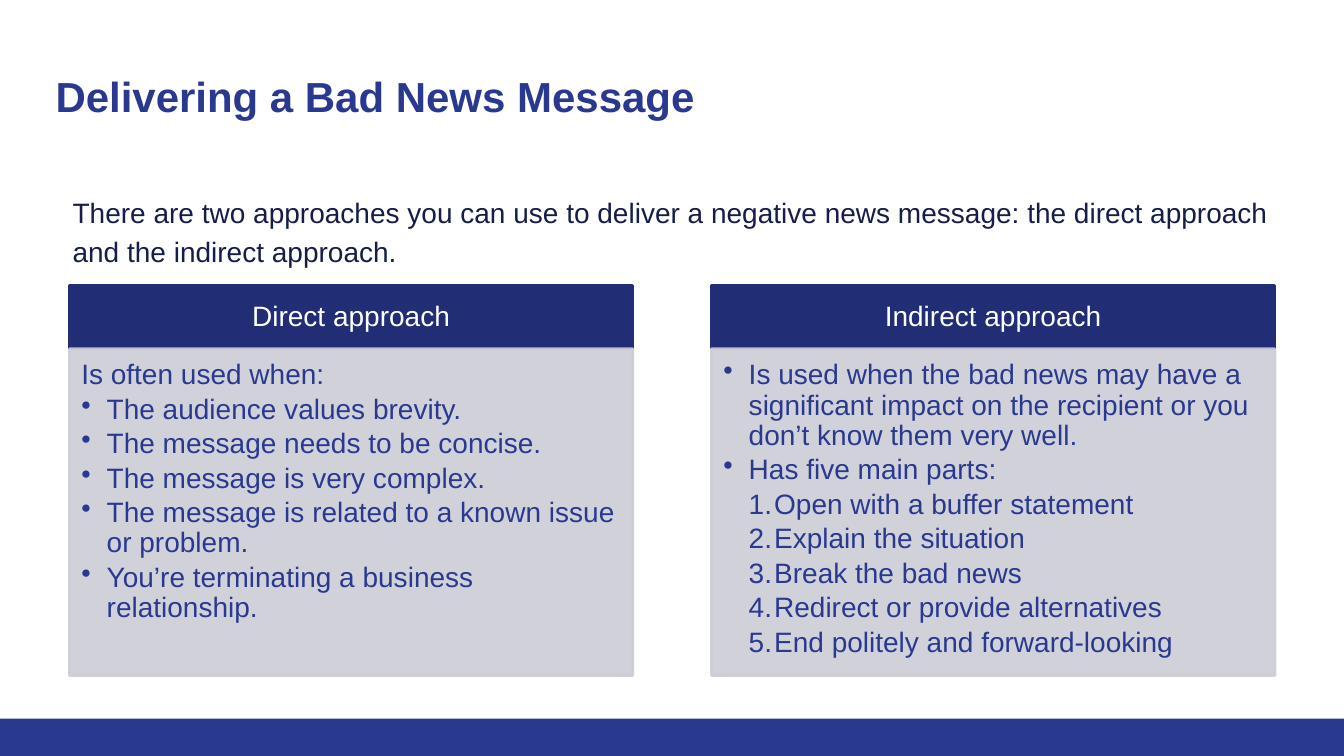
import dataclasses

import pptx
import pptx.dml.color
import pptx.enum.shapes
import pptx.enum.text
import pptx.oxml.ns
import pptx.util
from lxml import etree
from pptx.util import Cm


@dataclasses.dataclass(frozen=True)
class Theme:
    font: str = "Arial"
    title_size: int = 30
    body_size: int = 20
    blue: str = "2A3990"
    ink: str = "151D48"
    header: str = "212D74"
    panel: str = "CDCDD6"
    white: str = "FFFFFF"
    panel_opacity: int = 90


THEME = Theme()
ALIGN = pptx.enum.text.PP_ALIGN
ANCHOR = pptx.enum.text.MSO_ANCHOR

COLUMN_WIDTH = 14.2
HEADER_TOP = 7.19
HEADER_HEIGHT = 1.6
PANEL_HEIGHT = 8.23
INDENT = 0.64

PLAIN = (1, None, None)
BULLET = (1, "buChar", {"char": "•"})
NUMBER = (2, "buAutoNum", {"type": "arabicPeriod"})

COLUMNS = [
    (1.75, "Direct approach", [
        (PLAIN, "Is often used when:"),
        (BULLET, "The audience values brevity."),
        (BULLET, "The message needs to be concise."),
        (BULLET, "The message is very complex."),
        (BULLET, "The message is related to a known issue or problem."),
        (BULLET, "You’re terminating a business relationship."),
    ]),
    (17.93, "Indirect approach", [
        (BULLET, "Is used when the bad news may have a significant impact on "
                 "the recipient or you don’t know them very well."),
        (BULLET, "Has five main parts:"),
        (NUMBER, "Open with a buffer statement"),
        (NUMBER, "Explain the situation"),
        (NUMBER, "Break the bad news"),
        (NUMBER, "Redirect or provide alternatives"),
        (NUMBER, "End politely and forward-looking"),
    ]),
]


def rgb(color):
    return pptx.dml.color.RGBColor.from_string(color)


def style_font(paragraph, color, size=THEME.body_size, bold=False):
    paragraph.font.name = THEME.font
    paragraph.font.size = pptx.util.Pt(size)
    paragraph.font.bold = bold
    paragraph.font.color.rgb = rgb(color)


def prepare_frame(shape, insets, anchor=ANCHOR.TOP):
    frame = shape.text_frame
    frame.word_wrap = True
    frame.auto_size = pptx.enum.text.MSO_AUTO_SIZE.NONE
    frame.vertical_anchor = anchor
    left, top, right, bottom = insets
    frame.margin_left, frame.margin_top = Cm(left), Cm(top)
    frame.margin_right, frame.margin_bottom = Cm(right), Cm(bottom)
    return frame


def set_opacity(shape, percent):
    for color in shape.element.spPr.iter(pptx.oxml.ns.qn("a:srgbClr")):
        alpha = etree.SubElement(color, pptx.oxml.ns.qn("a:alpha"))
        alpha.set("val", str(percent * 1000))


def add_rectangle(slide, left, top, width, height, color, outlined=True):
    shape = slide.shapes.add_shape(
        pptx.enum.shapes.MSO_SHAPE.RECTANGLE,
        Cm(left), Cm(top), Cm(width), Cm(height))
    shape.shadow.inherit = False
    shape.fill.solid()
    shape.fill.fore_color.rgb = rgb(color)
    if outlined:
        shape.line.color.rgb = rgb(color)
        shape.line.width = pptx.util.Pt(2)
    else:
        shape.line.fill.background()
    return shape


def set_title(slide, text):
    title = slide.shapes.title
    title.left, title.top = Cm(1.15), Cm(1.52)
    title.width, title.height = Cm(31.55), Cm(2.26)
    frame = prepare_frame(title, (0.25,) * 4)
    frame.text = text
    paragraph = frame.paragraphs[0]
    paragraph.alignment = ALIGN.LEFT
    style_font(paragraph, THEME.blue, THEME.title_size, bold=True)


def add_intro(slide, text):
    box = slide.shapes.add_textbox(Cm(1.15), Cm(4.55), Cm(31.55), Cm(2.4))
    frame = prepare_frame(box, (0.68, 0.25, 0.25, 0.25))
    frame.text = text
    paragraph = frame.paragraphs[0]
    paragraph.line_spacing = 1.15
    style_font(paragraph, THEME.ink)


def add_header(slide, left, text):
    header = add_rectangle(
        slide, left, HEADER_TOP, COLUMN_WIDTH, HEADER_HEIGHT, THEME.header)
    frame = prepare_frame(header, (0.4, 0.23, 0.4, 0.23), ANCHOR.MIDDLE)
    frame.text = text
    paragraph = frame.paragraphs[0]
    paragraph.alignment = ALIGN.CENTER
    paragraph.line_spacing = 0.9
    style_font(paragraph, THEME.white)


def format_item(paragraph, marker):
    level, tag, attributes = marker
    paragraph.level = level
    paragraph.alignment = ALIGN.LEFT
    paragraph.line_spacing = 0.9
    paragraph.space_after = pptx.util.Pt(3)
    properties = paragraph._p.get_or_add_pPr()
    properties.set("marL", str(Cm(INDENT * level)))
    properties.set("indent", str(-Cm(INDENT)))
    if tag:
        etree.SubElement(properties, pptx.oxml.ns.qn("a:" + tag), attributes)
    style_font(paragraph, THEME.blue)


def add_panel(slide, left, items):
    panel = add_rectangle(
        slide, left, HEADER_TOP + HEADER_HEIGHT, COLUMN_WIDTH, PANEL_HEIGHT,
        THEME.panel)
    set_opacity(panel, THEME.panel_opacity)
    frame = prepare_frame(panel, (0.3, 0.3, 0.4, 0.43))
    frame.text = "\n".join(text for _, text in items)
    for paragraph, (marker, _) in zip(frame.paragraphs, items):
        format_item(paragraph, marker)


def main():
    presentation = pptx.Presentation()
    presentation.slide_width = Cm(33.87)
    presentation.slide_height = Cm(19.05)
    slide = presentation.slides.add_slide(presentation.slide_layouts[5])
    add_rectangle(slide, 0, 18.11, 33.87, 0.94, THEME.blue, outlined=False)
    set_title(slide, "Delivering a Bad News Message")
    add_intro(slide, "There are two approaches you can use to deliver a "
                     "negative news message: the direct approach and the "
                     "indirect approach.")
    for left, heading, items in COLUMNS:
        add_header(slide, left, heading)
        add_panel(slide, left, items)
    presentation.save("out.pptx")


if __name__ == "__main__":
    main()
